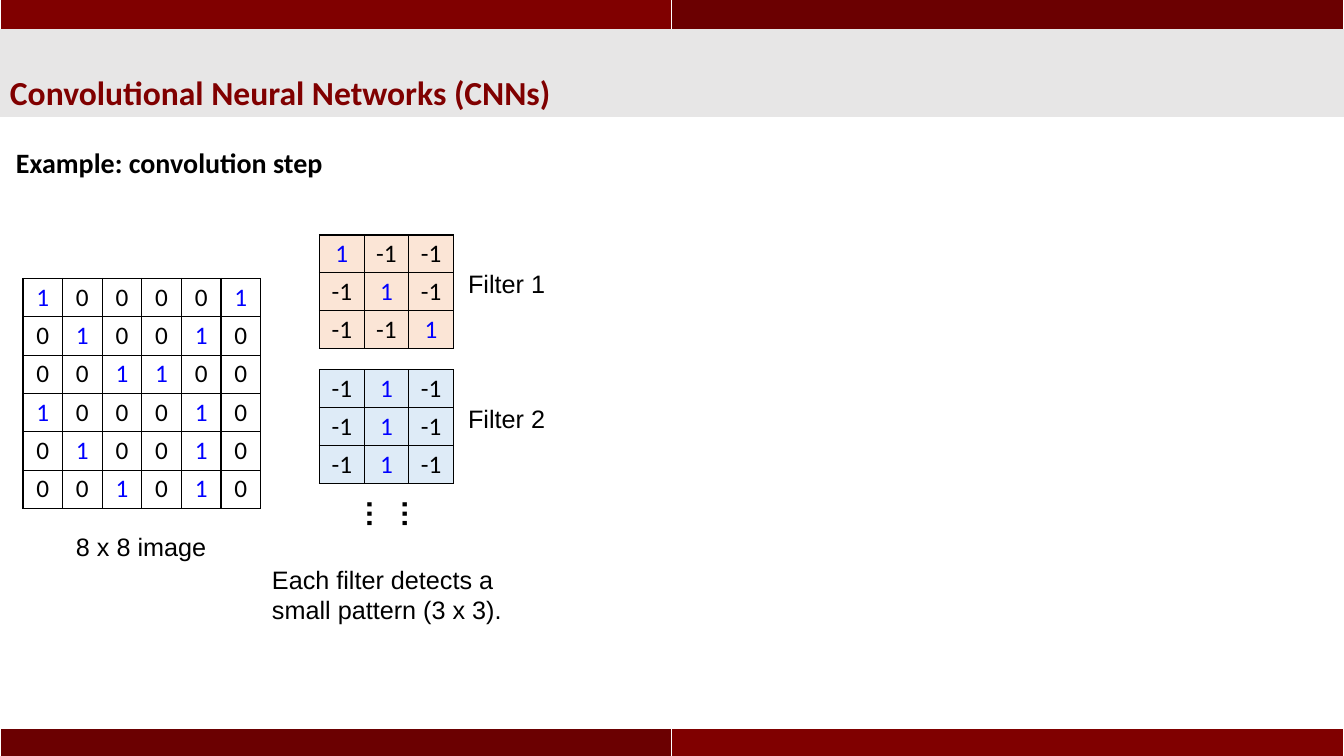
from dataclasses import dataclass

from lxml.etree import SubElement
from pptx import Presentation
from pptx.dml.color import RGBColor as RGB
from pptx.enum.shapes import MSO_SHAPE as SHAPE
from pptx.enum.text import MSO_ANCHOR as ANCHOR
from pptx.enum.text import MSO_AUTO_SIZE as AUTO
from pptx.enum.text import PP_ALIGN as ALIGN
from pptx.oxml.ns import qn
from pptx.util import Pt


@dataclass(frozen=True)
class Theme:
    red: str = "800000"
    dark_red: str = "6B0001"
    grey: str = "E7E6E6"
    white: str = "FFFFFF"
    black: str = "000000"
    blue: str = "0000FF"
    peach: str = "FBE5D6"
    pale_blue: str = "DEEBF7"
    heading_font: str = "Calibri"
    label_font: str = "Arial"
    title: float = 24
    subtitle: float = 20
    dots: float = 21
    body: float = 18


T = Theme()

IMAGE = [
    "1 0 0 0 0 1",
    "0 1 0 0 1 0",
    "0 0 1 1 0 0",
    "1 0 0 0 1 0",
    "0 1 0 0 1 0",
    "0 0 1 0 1 0",
]
FILTER_1 = ["1 -1 -1", "-1 1 -1", "-1 -1 1"]
FILTER_2 = ["-1 1 -1"] * 3
ROW_HEIGHT = 27


def write(tf, text, size=T.body, font=T.label_font, color=T.black,
          bold=False, align=ALIGN.LEFT):
    p = tf.paragraphs[0]
    p.alignment = align
    r = p.add_run()
    r.text = text
    r.font.size = Pt(size)
    r.font.name = font
    r.font.bold = bold
    r.font.color.rgb = RGB.from_string(color)


def add_label(s, box, text, rotation=0, **style):
    sp = s.shapes.add_textbox(*map(Pt, box))
    sp.rotation = rotation
    tf = sp.text_frame
    tf.word_wrap = True
    tf.auto_size = AUTO.SHAPE_TO_FIT_TEXT
    write(tf, text, **style)


def add_band(s, box, color, outline=None):
    sp = s.shapes.add_shape(SHAPE.RECTANGLE, *map(Pt, box))
    sp.shadow.inherit = False
    sp.fill.solid()
    sp.fill.fore_color.rgb = RGB.from_string(color)
    if outline:
        sp.line.color.rgb = RGB.from_string(outline)
        sp.line.width = Pt(0.75)
    else:
        sp.line.fill.background()
    return sp


def add_borders(cell):
    tc_pr = cell._tc.get_or_add_tcPr()
    for side in ("lnL", "lnR", "lnT", "lnB"):
        ln = SubElement(tc_pr, qn(f"a:{side}"), w=str(Pt(1)))
        fill = SubElement(ln, qn("a:solidFill"))
        SubElement(fill, qn("a:srgbClr"), val=T.black)


def add_matrix(s, left, top, column_width, rows, fill=None):
    values = [row.split() for row in rows]
    n_rows, n_cols = len(values), len(values[0])
    table = s.shapes.add_table(
        n_rows, n_cols, Pt(left), Pt(top),
        Pt(n_cols * column_width), Pt(n_rows * ROW_HEIGHT)).table
    table.first_row = table.horz_banding = False
    for column in table.columns:
        column.width = Pt(column_width)
    for i, row in enumerate(values):
        table.rows[i].height = Pt(ROW_HEIGHT)
        for j, value in enumerate(row):
            cell = table.cell(i, j)
            cell.margin_left = cell.margin_right = Pt(5.4)
            cell.margin_top = cell.margin_bottom = Pt(2.7)
            add_borders(cell)
            if fill:
                cell.fill.solid()
                cell.fill.fore_color.rgb = RGB.from_string(fill)
            else:
                cell.fill.background()
            write(cell.text_frame, value, font=T.heading_font,
                  color=T.blue if value == "1" else T.black,
                  align=ALIGN.CENTER)


def add_frame(s):
    for top, colors in ((520.6, (T.dark_red, T.red)),
                        (0, (T.red, T.dark_red))):
        for i, color in enumerate(colors):
            add_band(s, (i * 480, top, 480, 21.6), color, T.white)


def add_title(s, text):
    sp = add_band(s, (0, 20.9, 960, 62.6), T.grey)
    tf = sp.text_frame
    tf.word_wrap = True
    tf.vertical_anchor = ANCHOR.BOTTOM
    write(tf, text, size=T.title, font=T.heading_font, color=T.red, bold=True)


def main():
    prs = Presentation()
    prs.slide_width, prs.slide_height = Pt(960), Pt(540)
    s = prs.slides.add_slide(prs.slide_layouts[6])

    add_matrix(s, 16.4, 198.9, 28.3, IMAGE)
    add_label(s, (31.7, 375.8, 138.2, 28.8), "8 x 8 image", align=ALIGN.CENTER)

    filters = ((167.8, FILTER_1, T.peach), (264.2, FILTER_2, T.pale_blue))
    for number, (top, rows, fill) in enumerate(filters, 1):
        add_matrix(s, 228.2, top, 31.9, rows, fill)
        add_label(s, (319, top + 20.2, 85.7, 28.8), f"Filter {number}",
                  align=ALIGN.CENTER)
    add_label(s, (262.1, 341.3, 41.8, 58.3), "……", rotation=90,
              size=T.dots, bold=True)
    add_label(s, (187.2, 399.6, 210.2, 51.1),
              "Each filter detects a small pattern (3 x 3).")

    add_frame(s)
    add_title(s, "Convolutional Neural Networks (CNNs)")
    add_label(s, (4.3, 100.1, 684.7, 31.7), "Example: convolution step",
              size=T.subtitle, font=T.heading_font, bold=True)
    prs.save("out.pptx")


if __name__ == "__main__":
    main()
